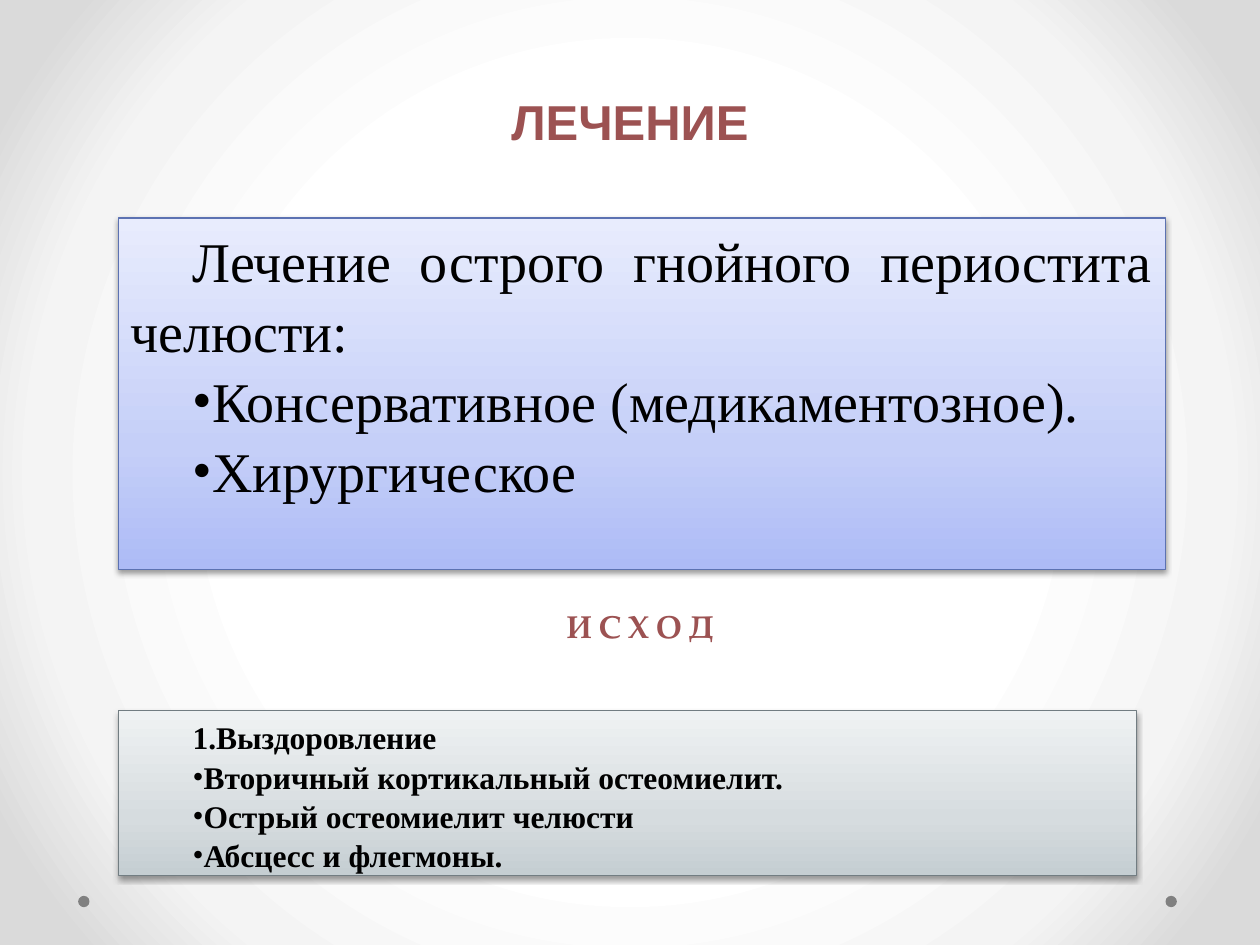
"""Build the slide on treatment and outcomes of acute purulent periostitis."""
from lxml.etree import SubElement
from pptx import Presentation
from pptx.dml.color import RGBColor
from pptx.enum.shapes import MSO_SHAPE
from pptx.enum.text import MSO_ANCHOR, PP_ALIGN
from pptx.oxml.ns import qn
from pptx.util import Pt

PX = 9144
WIDTH, HEIGHT = 1000, 750
INDENT = 49
COLORS = {
    "heading": "9C5252", "text": "000000", "dot": "808080", "shadow": "000000",
    "treatment_line": "5C72B2", "outcome_line": "727D82",
}
BACKDROP = [(50, "FFFFFF"), (76, "F4F4F4"), (92, "DADADA")]
HEADINGS = [
    ("ЛЕЧЕНИЕ", (396, 68, 208, 57), "Arial", 28),
    ("И С Х О Д", (440, 477, 139, 40), "TeX Gyre Pagella", 18),
]
PANELS = [
    {
        "box": (94, 173, 831, 279), "size": 32, "bold": False,
        "line": "treatment_line",
        "stops": [(0, "ADBBF6"), (35, "C5CFF8"), (100, "E8ECFD")],
        "items": [
            (None, "Лечение острого гнойного периостита челюсти:"),
            ("•", "Консервативное (медикаментозное)."),
            ("•", "Хирургическое"),
        ],
    },
    {
        "box": (94, 564, 808, 131), "size": 18, "bold": True,
        "line": "outcome_line",
        "stops": [(0, "C5CED2"), (35, "D6DCDF"), (100, "EFF2F3")],
        "items": [
            ("1.", "Выздоровление"),
            ("•", "Вторичный кортикальный остеомиелит."),
            ("•", "Острый остеомиелит челюсти"),
            ("•", "Абсцесс и флегмоны."),
        ],
    },
]
DOT_SIZE, DOT_TOP, DOT_LEFTS = 9, 711, (62, 925)


def emu(box):
    return [value * PX for value in box]


def color(name):
    return RGBColor.from_string(COLORS[name])


def add(parent, tag, **attributes):
    return SubElement(parent, qn(tag), {k: str(v) for k, v in attributes.items()})


def set_gradient(fill, owner, stops):
    fill.gradient()
    gradient = next(owner.iter(qn("a:gradFill")))
    stop_list = gradient.find(qn("a:gsLst"))
    for old_stop in list(stop_list):
        stop_list.remove(old_stop)
    for position, hex_color in stops:
        add(add(stop_list, "a:gs", pos=position * 1000), "a:srgbClr", val=hex_color)
    return gradient


def paint_backdrop(slide):
    gradient = set_gradient(slide.background.fill, slide.element, BACKDROP)
    gradient.remove(gradient.find(qn("a:lin")))
    circle = add(gradient, "a:path", path="circle")
    add(circle, "a:fillToRect", **dict.fromkeys("ltrb", 50000))


def add_dot(slide, left):
    box = emu((left, DOT_TOP, DOT_SIZE, DOT_SIZE))
    dot = slide.shapes.add_shape(MSO_SHAPE.OVAL, *box)
    dot.shadow.inherit = False
    dot.fill.solid()
    dot.fill.fore_color.rgb = color("dot")
    dot.line.fill.background()


def set_font(paragraph, name, size, bold, color_name):
    font = paragraph.font
    font.name, font.size, font.bold = name, Pt(size), bold
    font.color.rgb = color(color_name)


def add_heading(slide, text, box, font_name, size):
    frame = slide.shapes.add_textbox(*emu(box)).text_frame
    frame.word_wrap = False
    paragraph = frame.paragraphs[0]
    paragraph.text = text
    set_font(paragraph, font_name, size, True, "heading")


def add_shadow(shape):
    shape.shadow.inherit = False
    effects = shape.element.spPr.find(qn("a:effectLst"))
    shadow = add(effects, "a:outerShdw", blurRad=Pt(3.1), dist=Pt(1.6),
                 dir=5400000, rotWithShape=0)
    add(add(shadow, "a:srgbClr", val=COLORS["shadow"]), "a:alpha", val=38000)


def set_marker(paragraph, marker):
    properties = paragraph._p.get_or_add_pPr()
    properties.set("marL", "0")
    properties.set("indent", str(INDENT * PX))
    if marker is None:
        return
    if marker == "1.":
        bullet = add(properties, "a:buAutoNum", type="arabicPeriod")
    else:
        bullet = add(properties, "a:buChar", char=marker)
    bullet_font = add(properties, "a:buFont", typeface="Times New Roman")
    bullet.addprevious(bullet_font)


def add_panel(slide, panel):
    rectangle = slide.shapes.add_shape(MSO_SHAPE.RECTANGLE, *emu(panel["box"]))
    set_gradient(rectangle.fill, rectangle.element, panel["stops"])
    rectangle.fill.gradient_angle = 90
    rectangle.line.color.rgb = color(panel["line"])
    rectangle.line.width = Pt(0.75)
    add_shadow(rectangle)
    frame = rectangle.text_frame
    frame.word_wrap = True
    frame.vertical_anchor = MSO_ANCHOR.TOP
    for index, (marker, text) in enumerate(panel["items"]):
        paragraph = frame.add_paragraph() if index else frame.paragraphs[0]
        paragraph.text = text
        paragraph.alignment = PP_ALIGN.JUSTIFY
        paragraph.line_spacing = 1.04
        set_marker(paragraph, marker)
        set_font(paragraph, "Times New Roman", panel["size"], panel["bold"], "text")


def main():
    presentation = Presentation()
    presentation.slide_width, presentation.slide_height = emu((WIDTH, HEIGHT))
    slide = presentation.slides.add_slide(presentation.slide_layouts[6])
    paint_backdrop(slide)
    for left in DOT_LEFTS:
        add_dot(slide, left)
    for heading in HEADINGS:
        add_heading(slide, *heading)
    for panel in PANELS:
        add_panel(slide, panel)
    presentation.save("out.pptx")


if __name__ == "__main__":
    main()
